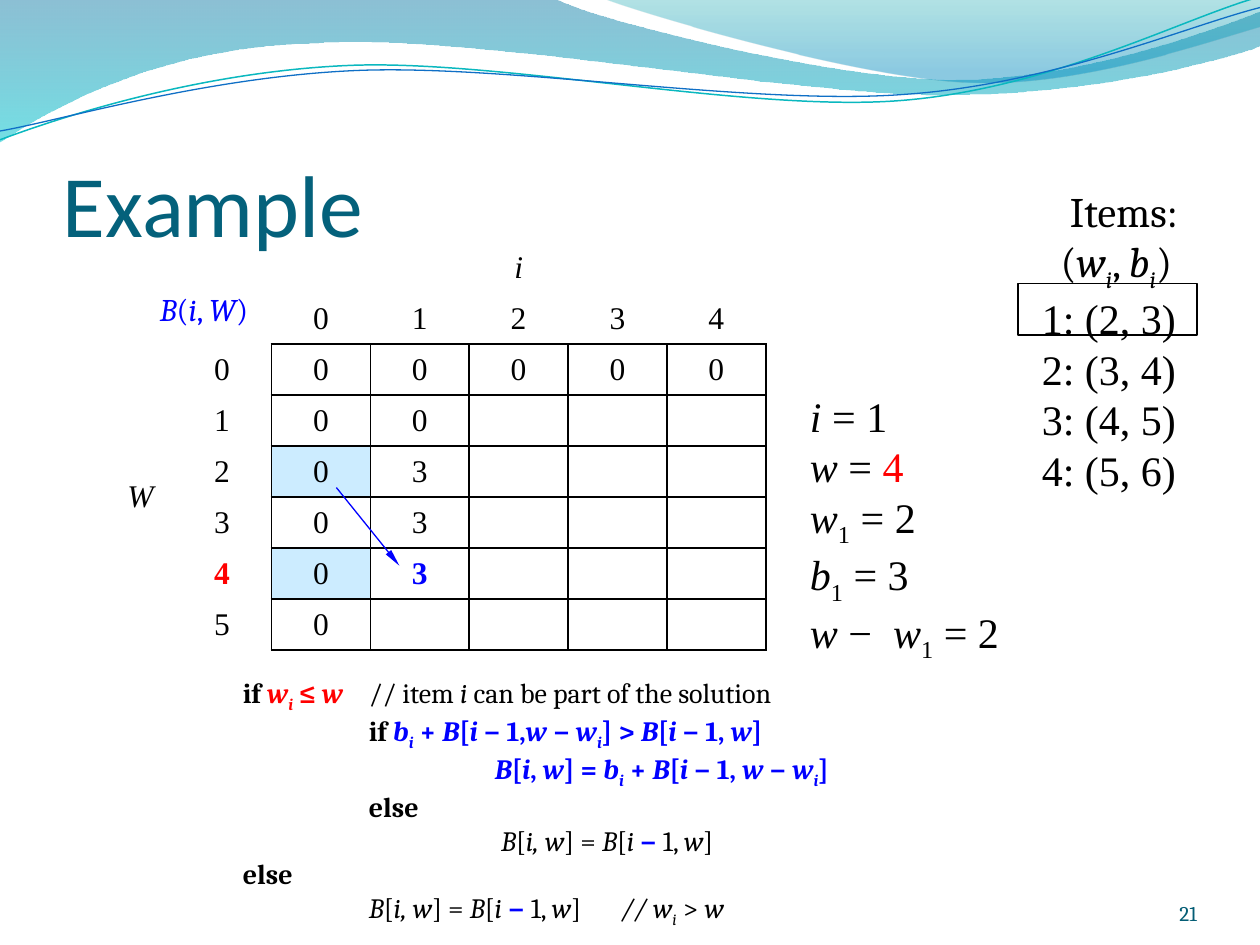
import pptx
import pptx.dml.color
import pptx.enum.shapes
import pptx.enum.text
import pptx.oxml
import pptx.oxml.ns
import pptx.util

RGB = pptx.dml.color.RGBColor
ALIGN = pptx.enum.text.PP_ALIGN
ANCHOR = pptx.enum.text.MSO_ANCHOR
SHAPE = pptx.enum.shapes.MSO_SHAPE
NSDECL = pptx.oxml.ns.nsdecls("a")

BLACK, RED, BLUE = RGB(0, 0, 0), RGB(0xFF, 0, 0), RGB(0, 0, 0xFF)
TITLE, NUMBER = RGB(0x04, 0x61, 0x7B), RGB(0x04, 0x5D, 0x75)
HIGHLIGHT = RGB(0xCC, 0xEC, 0xFF)
WAVE_DARK, WAVE_CYAN = RGB(0, 0x74, 0xA1), RGB(0, 0xC6, 0xCF)
WAVE_TEAL, WAVE_SKY = RGB(0, 0xA1, 0xA9), RGB(0, 0x8B, 0xBF)
LINE_TEAL, LINE_BLUE = RGB(0x0A, 0xB8, 0xBF), RGB(0x0F, 0x6F, 0xC6)

COLS, ROWS = 100, 75  # slide grid, a tenth of an inch per step
TAB = 10  # default tab width in grid steps
SERIF, TIMES, SANS = "Cambria", "Times New Roman", "Calibri"

# Rich text: runs are split by "~"; each is "flags|text".
# Flags: b bold, i italic, s subscript, R red, B blue.
CODE = [
    "b|if ~biR|w~bisR|i~bR| ≤ ~biR|w\t~|// item ~i|i~| can be part of the solution",
    "b|\tif ~biB|b~bisB|i~bB| + ~biB|B~bB|[~biB|i~bB| − 1,~biB|w ~bB|− ~biB|w~bisB|i"
    "~bB|] > ~biB|B~bB|[~biB|i~bB| − 1, ~biB|w~bB|]",
    "biB|\t\tB~bB|[~biB|i~bB|, ~biB|w~bB|] = ~biB|b~bisB|i~bB| + ~biB|B~bB|[~biB|i"
    "~bB| − 1, ~biB|w ~bB|− ~biB|w~bisB|i~bB|]",
    "b|\telse",
    "i|\t\t B~|[~i|i, w~|] = ~i|B~|[~i|i~bB| − ~|1, ~i|w~|]",
    "b|else",
    "i|\tB~|[~i|i, w~|] = ~i|B~|[~i|i~bB| − ~|1, ~i|w~|]\t~i|// w~is|i~| > ~i|w",
]
ITEMS = ["|Items:", "|(~i|w~is|i~|, ~i|b~is|i~|)"]
PAIRS = ["|1: (2, 3)", "|2: (3, 4)", "|3: (4, 5)", "|4: (5, 6)"]
STATE = ["i|i ~|= 1", "i|w ~|= ~R|4", "i|w~s|1~| = 2", "i|b~s|1~| = 3",
         "i|w ~|−  ~i|w~s|1~| = 2"]
TABLE = [
    ["", "", "i|i", "", "", "", ""],
    ["", "", "|0", "|1", "|2", "|3", "|4"],
    ["i|W", "|0", "|0", "|0", "|0", "|0", "|0"],
    ["", "|1", "|0", "|0", "", "", ""],
    ["", "|2", "|0", "|3", "", "", ""],
    ["", "|3", "|0", "|3", "", "", ""],
    ["", "bR|4", "|0", "bB|3", "", "", ""],
    ["", "|5", "|0", "", "", "", ""],
]
GRID_START = 2  # first table row and column with borders
HIGHLIGHTED = {(4, 2), (6, 2)}


def g(n):
    return pptx.util.Emu(round(n * pptx.util.Inches(0.1)))


def set_all(obj, values):
    for name, value in values.items():
        setattr(obj, name, value)


def add_runs(p, markup, font, size, color):
    for part in markup.split("~") if markup else []:
        flags, text = part.split("|")
        r = p.add_run()
        r.text = text
        set_all(r.font, {"name": font, "size": pptx.util.Pt(size),
                         "bold": "b" in flags, "italic": "i" in flags})
        r.font.color.rgb = RED if "R" in flags else BLUE if "B" in flags else color
        if "s" in flags:
            r._r.get_or_add_rPr().set("baseline", "-25000")


def add_text(s, box, lines, font, size, color=BLACK, align=ALIGN.LEFT, frame=None):
    tf = s.shapes.add_textbox(*map(g, box)).text_frame
    set_all(tf, {"word_wrap": True, **(frame or {})})
    for n, markup in enumerate(lines):
        p = tf.paragraphs[0] if n == 0 else tf.add_paragraph()
        p.alignment = align
        p._p.get_or_add_pPr().set("defTabSz", str(g(TAB)))
        add_runs(p, markup, font, size, color)
    return tf


def add_curve(s, start, segments, closed):
    """Segments are straight (x, y) or cubic (x1, y1, x2, y2, x, y)."""
    points = [(g(x), g(y)) for seg in segments for x, y in zip(seg[::2], seg[1::2])]
    builder = s.shapes.build_freeform(*map(g, start), scale=1.0)
    builder.add_line_segments(points, close=closed)
    sp = builder.convert_to_shape()
    sp.shadow.inherit = False
    # Join each three points of a cubic segment into one Bezier step
    steps = iter(sp._element.xpath(".//a:lnTo"))
    for seg in segments:
        first, *others = [next(steps) for _ in seg[::2]]
        if others:
            bezier = pptx.oxml.parse_xml(f"<a:cubicBezTo {NSDECL}/>")
            first.addprevious(bezier)
            for step in (first, *others):
                bezier.append(step[0])
                step.getparent().remove(step)
    return sp


def add_wave(s, start, segments, stops):
    sp = add_curve(s, start, segments, True)
    sp.line.fill.background()
    sp.fill.gradient()
    sp.fill.gradient_angle = 270
    for stop, (position, color, _) in zip(sp.fill.gradient_stops, stops):
        stop.position = position
        stop.color.rgb = color
    for clr, (_, _, alpha) in zip(sp._element.xpath(".//a:gs/a:srgbClr"), stops):
        clr.append(pptx.oxml.parse_xml(f'<a:alpha {NSDECL} val="{alpha * 1000}"/>'))


def add_wave_line(s, start, segments, color, width):
    sp = add_curve(s, start, segments, False)
    sp.fill.background()
    sp.line.color.rgb = color
    sp.line.width = pptx.util.Pt(width)


def set_borders(cell, sides):
    for side in "LRTB":
        fill = (f'<a:solidFill><a:srgbClr val="{BLACK}"/></a:solidFill>'
                if side in sides else "<a:noFill/>")
        ln = f'<a:ln{side} {NSDECL} w="12700">{fill}</a:ln{side}>'
        cell._tc.get_or_add_tcPr().append(pptx.oxml.parse_xml(ln))


def add_matrix(s, box, first_col):
    rows, cols = len(TABLE), len(TABLE[0])
    table = s.shapes.add_table(rows, cols, *map(g, box)).table
    set_all(table, {"first_row": False, "horz_banding": False})
    for c, col in enumerate(table.columns):
        col.width = g(first_col if c == 0 else (box[2] - first_col) / (cols - 1))
    for r, line in enumerate(TABLE):
        for c, markup in enumerate(line):
            cell = table.cell(r, c)
            cell.vertical_anchor = ANCHOR.MIDDLE
            in_row, in_col = r >= GRID_START, c >= GRID_START
            set_borders(cell, "LRTB" if in_row and in_col
                        else "R" if in_row and c == GRID_START - 1
                        else "B" if in_col and r == GRID_START - 1 else "")
            if (r, c) in HIGHLIGHTED:
                cell.fill.solid()
                cell.fill.fore_color.rgb = HIGHLIGHT
            else:
                cell.fill.background()
            p = cell.text_frame.paragraphs[0]
            p.alignment = ALIGN.CENTER
            add_runs(p, markup, TIMES, 18, BLACK)
    table.cell(0, 2).merge(table.cell(0, cols - 1))
    table.cell(2, 0).merge(table.cell(rows - 1, 0))


def add_frame(s, box):
    sp = s.shapes.add_shape(SHAPE.RECTANGLE, *map(g, box))
    sp.shadow.inherit = False
    sp.fill.background()
    sp.line.color.rgb = BLACK
    sp.line.width = pptx.util.Pt(1)


def add_arrow(s, *ends):
    cx = s.shapes.add_connector(pptx.enum.shapes.MSO_CONNECTOR.STRAIGHT, *map(g, ends))
    cx.line.color.rgb = BLUE
    cx.line.width = pptx.util.Pt(0.75)
    cx.line._get_or_add_ln().append(
        pptx.oxml.parse_xml(f'<a:tailEnd {NSDECL} type="triangle" w="sm" len="lg"/>'))
    cx._element.spPr.append(pptx.oxml.parse_xml(f"<a:effectLst {NSDECL}/>"))


def main():
    prs = pptx.Presentation()
    set_all(prs, {"slide_width": g(COLS), "slide_height": g(ROWS)})
    s = prs.slides.add_slide(prs.slide_layouts[6])

    # Waves along the top edge
    add_wave(s, (0, 0), [
        (44, -0.1), (47.6, 1.7, 66.4, 6.3, 75.8, 6.3), (85.3, 6.3, 95.8, 2.6, 100, 0.9),
        (100.1, 3.6), (98.3, 4.4, 87, 7.6, 74.6, 7.5), (62.2, 7.5, 38.2, 2.8, 25.7, 3.4),
        (12.9, 3.6, 4.6, 8.3, -0.1, 11.3)], [(0, WAVE_DARK, 45), (1, WAVE_CYAN, 55)])
    add_wave(s, (47.9, -0.1), [
        (50.9, 1.1, 68.2, 6.2, 76.9, 6.5), (85.6, 6.9, 96.1, 3.2, 100, 2.1), (100, 0)],
        [(0, WAVE_TEAL, 30), (0.8, WAVE_SKY, 45)])
    add_wave_line(s, (0, 11.1), [
        (4.8, 9.3, 15.8, 5.7, 27.7, 5.2), (39.5, 4.7, 59.3, 8.9, 71.3, 8),
        (83.3, 7.1, 93.8, 1.5, 99.8, -0.2)], LINE_TEAL, 0.85)
    add_wave_line(s, (0, 10.4), [
        (4.7, 9.6, 16.4, 6.1, 28.3, 5.6), (40.3, 5.1, 59.7, 8.4, 71.7, 7.5),
        (83.6, 6.7, 94.1, 2.1, 100, 0.6)], LINE_BLUE, 0.75)

    # Title, table and algorithm
    flat = {"vertical_anchor": ANCHOR.BOTTOM, "margin_left": 0, "margin_right": 0,
            "margin_bottom": 0}
    add_text(s, (5, 7.7, 90, 12.5), ["|Example"], SANS, 50, TITLE, frame=flat)
    add_matrix(s, (8.6, 19.2, 52.2, 32.4), 5.1)
    add_text(s, (18.3, 53.1, 56.7, 20.2), CODE, SERIF, 16)

    # Items list and current state
    tf = add_text(s, (81.7, 14.2, 15, 25.2), ITEMS, SERIF, 24)
    tf.paragraphs[0].alignment = ALIGN.CENTER
    tf.paragraphs[1]._p.get_or_add_pPr().set("marL", str(g(1.5)))
    for markup in PAIRS:
        add_runs(tf.add_paragraph(), markup, TIMES, 24, BLACK)
    add_text(s, (63.3, 30.5, 20, 21.2), STATE, TIMES, 24)

    # Marks on the current step, table label and slide number
    add_frame(s, (80.8, 22.5, 14.2, 4.1))
    add_arrow(s, 26.7, 38.7, 31.7, 44.9)
    add_text(s, (11.7, 22.5, 10, 4), ["iB|B~B|(~iB|i~B|, ~iB|W~B|)"], SERIF, 18)
    add_text(s, (86.7, 69.5, 8.3, 4), ["|21"], SERIF, 12, NUMBER, ALIGN.RIGHT,
             {**flat, "margin_top": 0})
    prs.save("out.pptx")


if __name__ == "__main__":
    main()
